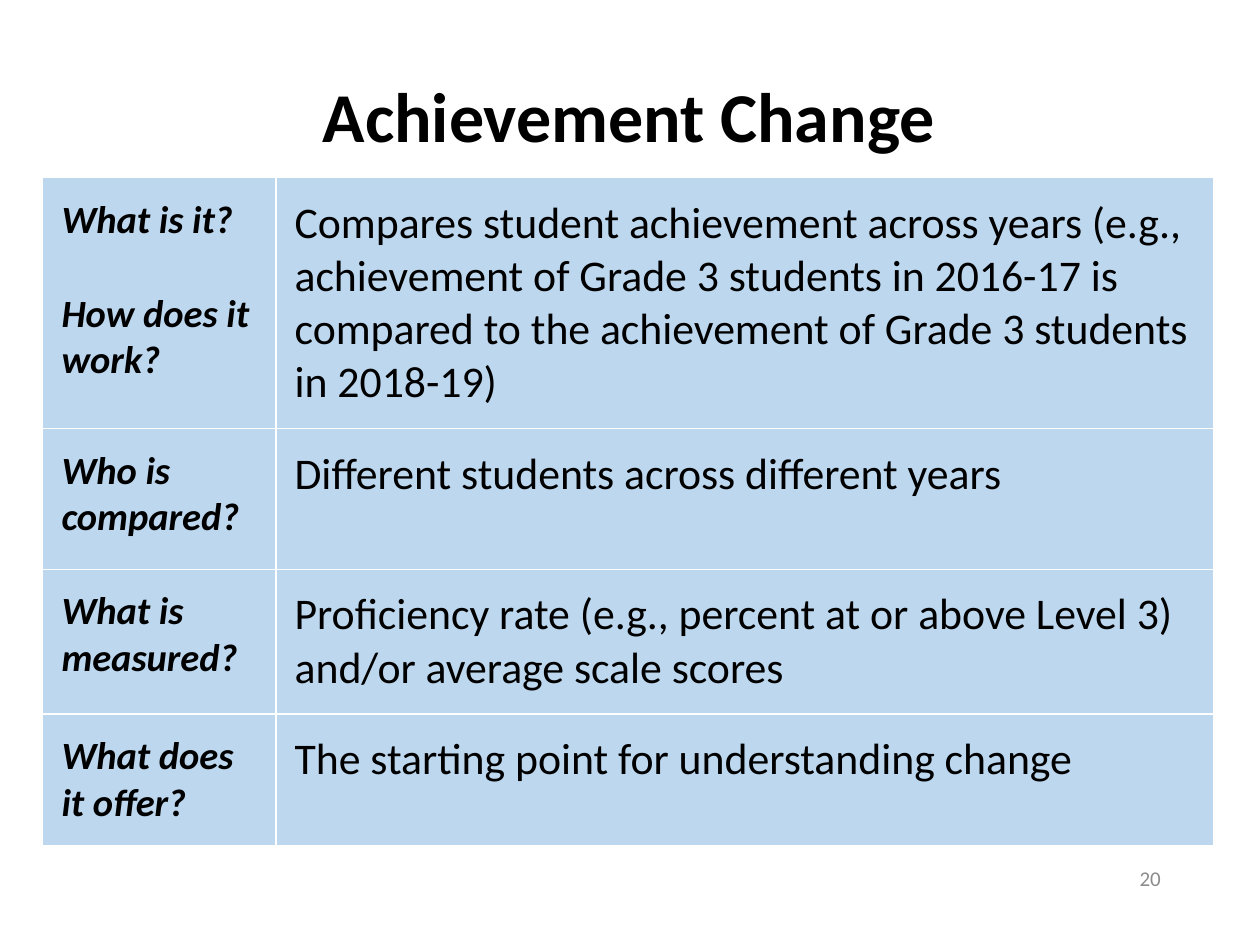
from typing import NamedTuple

from lxml import etree
from pptx import Presentation
from pptx.dml.color import RGBColor
from pptx.enum.text import MSO_ANCHOR, PP_ALIGN
from pptx.oxml.ns import qn
from pptx.util import Cm, Pt

MIDDLE = MSO_ANCHOR.MIDDLE
CENTER, RIGHT = PP_ALIGN.CENTER, PP_ALIGN.RIGHT
FONT = "Calibri"
COLORS = {"text": "000000", "cell": "BDD7EE", "border": "FFFFFF", "number": "8C8C8C"}
COLUMN_WIDTHS = (4.7, 18.9)
CELL_MARGIN = Cm(0.38)
QUESTION_GAP = Pt(27)


class Row(NamedTuple):
    height: float
    questions: tuple[str, ...]
    answer: str


ROWS = (
    Row(5.05, ("What is it?", "How does it work?"),
        "Compares student achievement across years (e.g., achievement of Grade 3 "
        "students in 2016-17 is compared to the achievement of Grade 3 students "
        "in 2018-19)"),
    Row(2.84, ("Who is compared?",), "Different students across different years"),
    Row(2.9, ("What is measured?",),
        "Proficiency rate (e.g., percent at or above Level 3) "
        "and/or average scale scores"),
    Row(2.64, ("What does it offer?",), "The starting point for understanding change"),
)


def set_font(p, size: float, color: str = "text", bold: bool = False,
             italic: bool = False) -> None:
    f = p.font
    f.name, f.size, f.bold, f.italic = FONT, Pt(size), bold, italic
    f.color.rgb = RGBColor.from_string(COLORS[color])


def style_cell(cell) -> None:
    """Give the cell its margins, thin borders and fill."""
    cell.margin_left = cell.margin_right = CELL_MARGIN
    cell.margin_top = cell.margin_bottom = CELL_MARGIN
    tc_pr = cell._tc.get_or_add_tcPr()
    for side in ("lnL", "lnR", "lnT", "lnB"):
        ln = etree.SubElement(tc_pr, qn(f"a:{side}"), w=str(Pt(1)))
        fill = etree.SubElement(ln, qn("a:solidFill"))
        etree.SubElement(fill, qn("a:srgbClr"), val=COLORS["border"])
    cell.fill.solid()
    cell.fill.fore_color.rgb = RGBColor.from_string(COLORS["cell"])


def fill_cell(cell, lines: tuple[str, ...], size: float, emphasis: bool) -> None:
    style_cell(cell)
    tf = cell.text_frame
    tf.text = "\n".join(lines)
    for i, p in enumerate(tf.paragraphs):
        if i:
            p.space_before = QUESTION_GAP
        set_font(p, size, bold=emphasis, italic=emphasis)


def add_title(s, text: str) -> None:
    sp = s.shapes.title
    sp.left, sp.top, sp.width, sp.height = Cm(0), Cm(1.02), Cm(25.35), Cm(2.79)
    tf = sp.text_frame
    tf.text = text
    tf.vertical_anchor = MIDDLE
    p = tf.paragraphs[0]
    p.alignment, p.line_spacing = CENTER, 0.9
    set_font(p, 40, bold=True)


def add_question_table(s) -> None:
    table = s.shapes.add_table(
        len(ROWS), len(COLUMN_WIDTHS), Cm(0.86), Cm(3.58),
        Cm(sum(COLUMN_WIDTHS)), Cm(sum(row.height for row in ROWS))).table
    table.first_row = table.horz_banding = False
    for column, width in zip(table.columns, COLUMN_WIDTHS):
        column.width = Cm(width)
    for i, row in enumerate(ROWS):
        table.rows[i].height = Cm(row.height)
        fill_cell(table.cell(i, 0), row.questions, 22, emphasis=True)
        fill_cell(table.cell(i, 1), (row.answer,), 25, emphasis=False)


def add_slide_number(s, number: str) -> None:
    tf = s.shapes.add_textbox(Cm(17.93), Cm(17.2), Cm(5.72), Cm(1.02)).text_frame
    tf.word_wrap = True
    tf.vertical_anchor = MIDDLE
    tf.text = number
    p = tf.paragraphs[0]
    p.alignment = RIGHT
    set_font(p, 12, "number")


def main() -> None:
    prs = Presentation()
    prs.slide_width, prs.slide_height = Cm(25.4), Cm(19.05)
    s = prs.slides.add_slide(prs.slide_layouts.get_by_name("Title Only"))
    add_title(s, "Achievement Change")
    add_question_table(s)
    add_slide_number(s, "20")
    prs.save("out.pptx")


if __name__ == "__main__":
    main()
